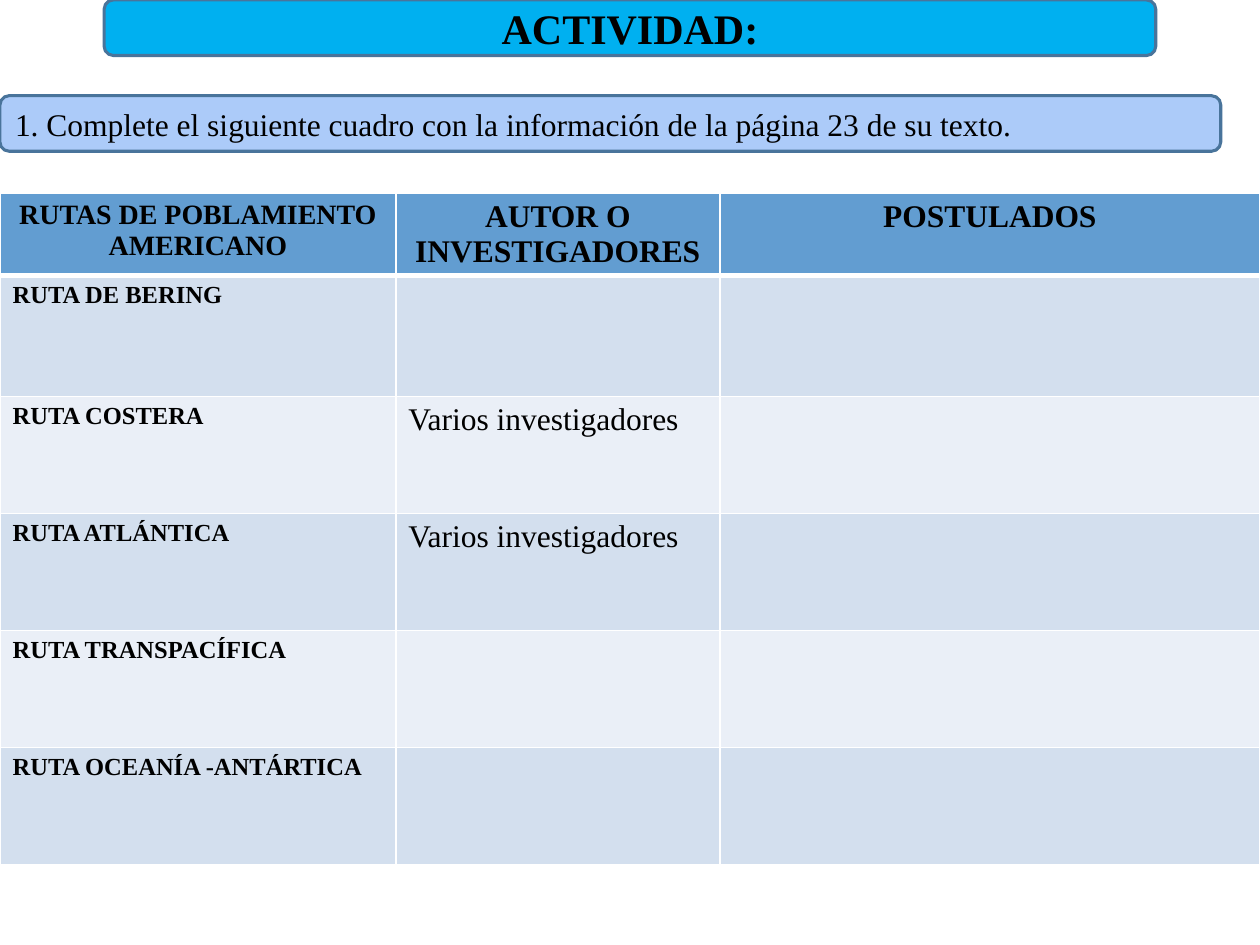
from lxml import etree
from pptx import Presentation
from pptx.dml.color import RGBColor
from pptx.enum.shapes import MSO_SHAPE
from pptx.enum.text import MSO_ANCHOR, PP_ALIGN
from pptx.oxml.ns import qn
from pptx.util import Cm, Pt

ROUNDED = MSO_SHAPE.ROUNDED_RECTANGLE
MIDDLE = MSO_ANCHOR.MIDDLE
CENTER, LEFT = PP_ALIGN.CENTER, PP_ALIGN.LEFT

COLORS = {
    "text": "000000", "title": "00B0F0", "task": "ACCBF9", "outline": "49749B",
    "header": "629DD1", "odd": "D3DFEE", "even": "EAEFF7", "border": "FFFFFF",
}
BANNERS = [
    ("ACTIVIDAD:", (2.1, 0, 21.2, 1.12), "title", CENTER, {"size": Pt(24), "bold": True}),
    ("1. Complete el siguiente cuadro con la información de la página 23 de su texto.",
     (0, 1.93, 24.61, 1.12), "task", LEFT, {"size": Pt(18), "bold": False}),
]
HEADERS = [
    ("RUTAS DE POBLAMIENTO AMERICANO", 16),
    ("AUTOR O INVESTIGADORES", 18),
    ("POSTULADOS", 18),
]
ROUTES = [
    ("RUTA DE BERING", ""),
    ("RUTA COSTERA", "Varios investigadores"),
    ("RUTA ATLÁNTICA", "Varios investigadores"),
    ("RUTA TRANSPACÍFICA", ""),
    ("RUTA OCEANÍA -ANTÁRTICA", ""),
]
COLUMN_WIDTHS = [7.98, 6.53, 10.89]
ROW_HEIGHTS = [1.65, 2.44] + [2.36] * 4
TABLE_TOP = 3.89


def rgb(key):
    return RGBColor.from_string(COLORS[key])


def write(frame, text, align, font_format):
    paragraph = frame.paragraphs[0]
    paragraph.text = text
    paragraph.alignment = align
    for attribute, value in {"name": "Times New Roman", **font_format}.items():
        setattr(paragraph.font, attribute, value)
    paragraph.font.color.rgb = rgb("text")


def add_borders(cell, bottom_width):
    properties = cell._tc.get_or_add_tcPr()
    for side, width in {"L": 1, "R": 1, "T": 1, "B": bottom_width}.items():
        border = etree.SubElement(properties, qn(f"a:ln{side}"), w=str(Pt(width)))
        fill = etree.SubElement(border, qn("a:solidFill"))
        etree.SubElement(fill, qn("a:srgbClr"), val=COLORS["border"])


def fill_cell(cell, text, align, font_format, color, bottom_width=1):
    add_borders(cell, bottom_width)
    cell.fill.solid()
    cell.fill.fore_color.rgb = rgb(color)
    if text:
        write(cell.text_frame, text, align, font_format)


def add_banner(slide, text, place, color, align, font_format):
    banner = slide.shapes.add_shape(ROUNDED, *map(Cm, place))
    banner.shadow.inherit = False
    banner.fill.solid()
    banner.fill.fore_color.rgb = rgb(color)
    banner.line.color.rgb = rgb("outline")
    banner.line.width = Pt(1.75)
    banner.text_frame.word_wrap = True
    banner.text_frame.vertical_anchor = MIDDLE
    write(banner.text_frame, text, align, font_format)


def add_routes_table(slide):
    table = slide.shapes.add_table(
        len(ROW_HEIGHTS), len(COLUMN_WIDTHS), 0, Cm(TABLE_TOP),
        Cm(sum(COLUMN_WIDTHS)), Cm(sum(ROW_HEIGHTS))).table
    for column, width in zip(table.columns, COLUMN_WIDTHS):
        column.width = Cm(width)
    for row, height in zip(table.rows, ROW_HEIGHTS):
        row.height = Cm(height)
    for index, (heading, size) in enumerate(HEADERS):
        fill_cell(table.cell(0, index), heading, CENTER,
                  {"size": Pt(size), "bold": True}, "header", 3)
    for number, (route, author) in enumerate(ROUTES, start=1):
        band = "odd" if number % 2 else "even"
        for index, text in enumerate((route, author, "")):
            is_route = index == 0
            font_format = {"size": Pt(14 if is_route else 18), "bold": is_route}
            fill_cell(table.cell(number, index), text, LEFT, font_format, band)


def main():
    deck = Presentation()
    deck.slide_width, deck.slide_height = Cm(25.4), Cm(19.05)
    slide = deck.slides.add_slide(deck.slide_layouts[6])
    title, task = BANNERS
    add_banner(slide, *title)
    add_routes_table(slide)
    add_banner(slide, *task)
    deck.save("out.pptx")


if __name__ == "__main__":
    main()
